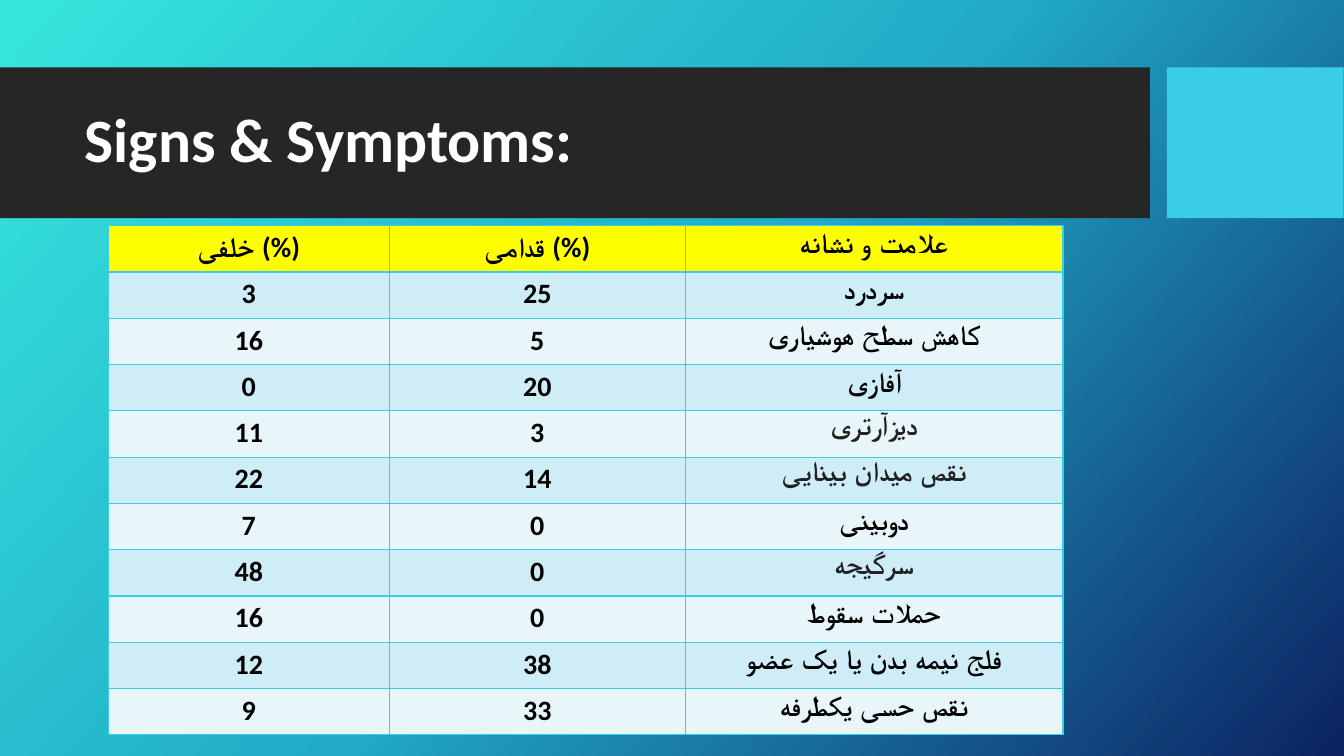
from copy import deepcopy
from dataclasses import dataclass

from lxml.etree import SubElement
from pptx import Presentation
from pptx.dml.color import RGBColor
from pptx.enum.shapes import MSO_SHAPE
from pptx.enum.text import MSO_ANCHOR, PP_ALIGN
from pptx.oxml.ns import qn
from pptx.util import Cm, Pt

FONT_NAME = "Calibri"
WHITE = RGBColor(0xFF, 0xFF, 0xFF)
BLACK = RGBColor(0x00, 0x00, 0x00)
INK = RGBColor(0x20, 0x21, 0x22)
CHARCOAL = RGBColor(0x26, 0x26, 0x26)
CYAN = RGBColor(0x39, 0xCD, 0xE7)
YELLOW = RGBColor(0xFF, 0xFF, 0x00)
BANDS = (RGBColor(0xE8, 0xF6, 0xFA), RGBColor(0xCE, 0xED, 0xF6))
GRADIENT = (
    (0, RGBColor(0x36, 0xE6, 0xDD)),
    (0.5, RGBColor(0x21, 0xAB, 0xC8)),
    (1, RGBColor(0x0C, 0x22, 0x63)),
)
TITLE_FORMAT = {"name": FONT_NAME, "size": Pt(44), "bold": True}
CELL_FORMAT = {"name": FONT_NAME, "size": Pt(20), "bold": True}
TIGHT_MARGINS = {
    "margin_left": Cm(0.18),
    "margin_right": Cm(0.18),
    "margin_top": 0,
    "margin_bottom": 0,
}
COLUMN_WIDTHS = (7.08, 7.46, 9.52)
TABLE_HEIGHT = 12.83


@dataclass(frozen=True)
class Bar:
    left: float
    width: float
    color: RGBColor


@dataclass(frozen=True)
class Symptom:
    posterior: str
    anterior: str
    sign: str
    right_to_left: bool = False


BARS = (Bar(0, 28.98, CHARCOAL), Bar(29.41, 4.45, CYAN))
SYMPTOMS = (
    Symptom("خلفی (%)", "قدامی (%)", "علامت و نشانه"),
    Symptom("3", "25", "سردرد"),
    Symptom("16", "5", "کاهش سطح هوشیاری"),
    Symptom("0", "20", "آفازی"),
    Symptom("11", "3", "دیزآرتری", True),
    Symptom("22", "14", "نقص میدان بینایی", True),
    Symptom("7", "0", "دوبینی"),
    Symptom("48", "0", "سرگیجه", True),
    Symptom("16", "0", "حملات سقوط"),
    Symptom("12", "38", "فلج نیمه بدن یا یک عضو"),
    Symptom("9", "33", "نقص حسی یکطرفه"),
)


def apply_format(target, values: dict) -> None:
    for name, value in values.items():
        setattr(target, name, value)


def paint_background(slide) -> None:
    fill = slide.background.fill
    fill.gradient()
    fill.gradient_angle = 360 - 42
    stop_list = slide.element.xpath("./p:cSld/p:bg//a:gsLst")[0]
    stop_list.append(deepcopy(stop_list[-1]))
    for stop, (position, color) in zip(fill.gradient_stops, GRADIENT):
        stop.position = position
        stop.color.rgb = color


def draw_bar(slide, bar: Bar) -> None:
    shape = slide.shapes.add_shape(
        MSO_SHAPE.RECTANGLE, Cm(bar.left), Cm(1.7), Cm(bar.width), Cm(3.8)
    )
    shape.shadow.inherit = False
    shape.fill.solid()
    shape.fill.fore_color.rgb = bar.color
    shape.line.fill.background()


def write_title(slide) -> None:
    title = slide.shapes.title
    apply_format(title, {"left": Cm(1.88), "top": Cm(2.08), "width": Cm(26.7), "height": Cm(3)})
    title.text_frame.text = "Signs & Symptoms:"
    title.text_frame.vertical_anchor = MSO_ANCHOR.MIDDLE
    paragraph = title.text_frame.paragraphs[0]
    apply_format(paragraph, {"alignment": PP_ALIGN.LEFT, "line_spacing": 0.9})
    apply_format(paragraph.runs[0].font, TITLE_FORMAT)
    paragraph.runs[0].font.color.rgb = WHITE
    tree = title.element.getparent()
    tree.append(title.element)


def add_borders(cell) -> None:
    properties = cell._tc.get_or_add_tcPr()
    for side in ("lnL", "lnR", "lnT", "lnB"):
        line = SubElement(properties, qn(f"a:{side}"), w=str(Pt(1)))
        solid = SubElement(line, qn("a:solidFill"))
        SubElement(solid, qn("a:srgbClr"), val=str(CYAN))


def write_cell(cell, text: str, fill: RGBColor, right_to_left: bool) -> None:
    add_borders(cell)
    cell.fill.solid()
    cell.fill.fore_color.rgb = fill
    cell.text = text
    paragraph = cell.text_frame.paragraphs[0]
    paragraph.alignment = PP_ALIGN.CENTER
    font = paragraph.runs[0].font
    apply_format(font, CELL_FORMAT)
    font.color.rgb = INK if right_to_left else BLACK
    if right_to_left:
        apply_format(cell, TIGHT_MARGINS)
        paragraph.line_spacing = 1.07
        paragraph._p.get_or_add_pPr().set("rtl", "1")


def draw_table(slide) -> None:
    table = slide.shapes.add_table(
        len(SYMPTOMS), len(COLUMN_WIDTHS),
        Cm(2.73), Cm(5.69), Cm(sum(COLUMN_WIDTHS)), Cm(TABLE_HEIGHT),
    ).table
    for column, width in zip(table.columns, COLUMN_WIDTHS):
        column.width = Cm(width)
    for index, symptom in enumerate(SYMPTOMS):
        fill = BANDS[index % 2] if index else YELLOW
        cells = table.rows[index].cells
        texts = (symptom.posterior, symptom.anterior, symptom.sign)
        for cell, text in zip(cells, texts):
            write_cell(cell, text, fill, symptom.right_to_left and text == symptom.sign)


def main() -> None:
    presentation = Presentation()
    presentation.slide_width = Cm(33.87)
    presentation.slide_height = Cm(19.05)
    slide = presentation.slides.add_slide(presentation.slide_layouts[5])
    paint_background(slide)
    for bar in BARS:
        draw_bar(slide, bar)
    write_title(slide)
    draw_table(slide)
    presentation.save("out.pptx")


if __name__ == "__main__":
    main()
